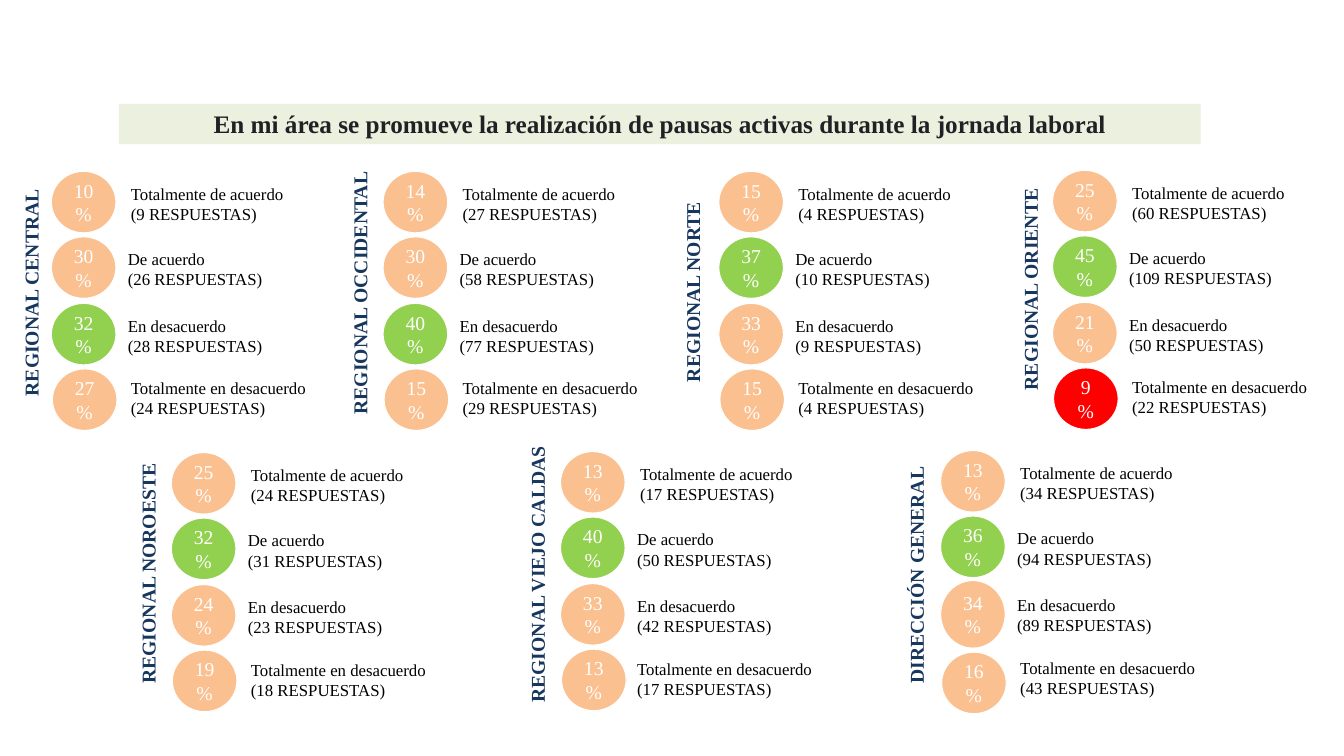
"""Builds the survey slide on active breaks, one group of answers per region."""
from dataclasses import dataclass

from pptx import Presentation
from pptx.dml.color import RGBColor as Rgb
from pptx.enum.shapes import MSO_SHAPE as Kind
from pptx.enum.text import MSO_ANCHOR as Anchor, MSO_AUTO_SIZE as Auto, PP_ALIGN as Align
from pptx.util import Emu, Pt


@dataclass(frozen=True)
class Theme:
    font: str = "Times New Roman"
    peach: str = "FAC090"
    green: str = "92D050"
    red: str = "FF0000"
    white: str = "FFFFFF"
    black: str = "000000"
    navy: str = "17375E"
    ink: str = "202124"
    band: str = "EBF1DE"
    head: int = 18
    name: int = 14
    disc: int = 14
    note: int = 12
    edge: float = 0.75


LOOK = Theme()
SCALE = 9144
DISC_W, DISC_H = 64, 61
NOTE_H = 61
NAME_W = 44

ROWS = [
    ("Totalmente de acuerdo", 0, 0, 69, 2, 237),
    ("De acuerdo", 0, 65, 66, 67, 179),
    ("En desacuerdo", 0, 131, 66, 133, 179),
    ("Totalmente en desacuerdo", 1, 196, 69, 195, 242),
]

P, G, R = LOOK.peach, LOOK.green, LOOK.red
GROUPS = [
    ("REGIONAL CENTRAL", (14, 87, 316), (51, 170),
     [(10, 9, P), (30, 26, P), (32, 28, G), (27, 24, P)]),
    ("REGIONAL OCCIDENTAL", (340, 104, 317), (380, 170),
     [(14, 27, P), (30, 58, P), (40, 77, G), (15, 29, P)]),
    ("REGIONAL NORTE", (670, 188, 201), (713, 170),
     [(15, 4, P), (37, 10, G), (33, 9, P), (15, 4, P)]),
    ("REGIONAL ORIENTE", (1005, 81, 316), (1044, 169),
     [(25, 60, P), (45, 109, G), (21, 50, P), (9, 22, R)]),
    ("REGIONAL NOROESTE", (130, 449, 239), (170, 449),
     [(25, 24, P), (32, 31, G), (24, 23, P), (19, 18, P)]),
    ("REGIONAL VIEJO CALDAS", (516, 391, 316), (556, 448),
     [(13, 17, P), (40, 50, G), (33, 42, P), (13, 17, P)]),
    ("DIRECCIÓN GENERAL", (892, 372, 316), (933, 447),
     [(13, 34, P), (36, 94, G), (34, 89, P), (16, 43, P)]),
]
DISC_ODD = {("DIRECCIÓN GENERAL", 2): (-2, 6), ("DIRECCIÓN GENERAL", 3): (4, 0)}
NOTE_ODD = {("REGIONAL VIEJO CALDAS", 3): -3}


def place(*box):
    """Turn px lengths into EMU."""
    return [Emu(n * SCALE) for n in box]


def write(frame, lines, size, color, bold=False, align=Align.LEFT):
    """Fill a text frame with one run per line."""
    frame.word_wrap = True
    for i, line in enumerate(lines):
        para = frame.paragraphs[0] if i == 0 else frame.add_paragraph()
        para.alignment = align
        run = para.add_run()
        run.text = line
        font = run.font
        font.name, font.size, font.bold = LOOK.font, Pt(size), bold
        font.color.rgb = Rgb.from_string(color)


def pad(frame):
    """Give a frame equal insets on all sides."""
    inset = Emu(10 * SCALE)
    frame.margin_left = frame.margin_right = inset
    frame.margin_top = frame.margin_bottom = inset


def add_form(slide, kind, box, fill):
    """Add a flat filled shape."""
    form = slide.shapes.add_shape(kind, *place(*box))
    form.shadow.inherit = False
    form.fill.solid()
    form.fill.fore_color.rgb = Rgb.from_string(fill)
    return form


def add_head(slide, text):
    """Add the title band."""
    form = add_form(slide, Kind.RECTANGLE, (118, 103, 1073, 40), LOOK.band)
    form.line.fill.background()
    frame = form.text_frame
    frame.vertical_anchor = Anchor.TOP
    frame.auto_size = Auto.SHAPE_TO_FIT_TEXT
    write(frame, [text], LOOK.head, LOOK.ink, True, Align.CENTER)


def add_disc(slide, box, share, fill):
    """Add a circle with a percentage."""
    form = add_form(slide, Kind.OVAL, box, fill)
    form.line.color.rgb = Rgb.from_string(LOOK.white)
    form.line.width = Pt(LOOK.edge)
    frame = form.text_frame
    frame.vertical_anchor = Anchor.MIDDLE
    pad(frame)
    write(frame, [f"{share}%"], LOOK.disc, LOOK.white, align=Align.CENTER)


def add_note(slide, box, label, count):
    """Add an answer with its number of replies."""
    frame = slide.shapes.add_textbox(*place(*box)).text_frame
    frame.auto_size = Auto.SHAPE_TO_FIT_TEXT
    pad(frame)
    write(frame, [label, f"({count} RESPUESTAS)"], LOOK.note, LOOK.black)


def add_name(slide, x, y, high, text):
    """Add a region name that reads upwards."""
    frame = slide.shapes.add_textbox(*place(x, y, NAME_W, high)).text_frame
    frame.auto_size = Auto.SHAPE_TO_FIT_TEXT
    frame._txBody.bodyPr.set("vert", "vert270")
    write(frame, [text], LOOK.name, LOOK.navy, True)


def add_group(slide, name, spot, start, data):
    """Add a region with its four answers."""
    x, y = start
    for i, (row, item) in enumerate(zip(ROWS, data)):
        label, disc_x, disc_y, note_x, note_y, wide = row
        share, count, fill = item
        drop, grow = DISC_ODD.get((name, i), (0, 0))
        shift = NOTE_ODD.get((name, i), 0)
        disc = (x + disc_x, y + disc_y + drop, DISC_W, DISC_H + grow)
        add_disc(slide, disc, share, fill)
        note = (x + note_x + shift, y + note_y, wide, NOTE_H)
        add_note(slide, note, label, count)
    add_name(slide, *spot, name)


def main():
    """Build and save the slide."""
    deck = Presentation()
    deck.slide_width, deck.slide_height = place(1333, 750)
    slide = deck.slides.add_slide(deck.slide_layouts[6])
    for group in GROUPS:
        add_group(slide, *group)
    add_head(slide, "En mi área se promueve la realización de pausas activas durante la jornada laboral")
    deck.save("out.pptx")


if __name__ == "__main__":
    main()
